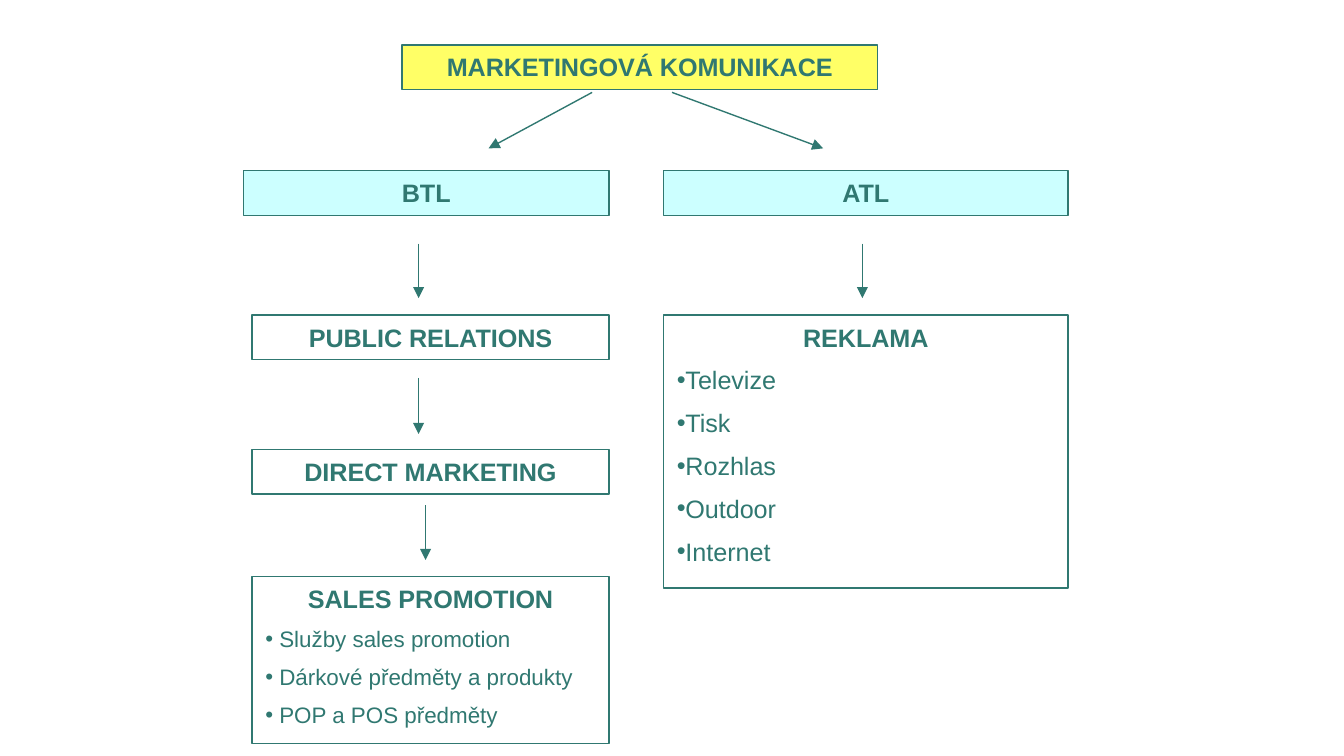
from pptx import Presentation
from pptx.dml.color import RGBColor
from pptx.enum.shapes import MSO_CONNECTOR, MSO_SHAPE
from pptx.enum.text import MSO_ANCHOR, PP_ALIGN
from pptx.oxml.ns import qn
from pptx.util import Pt
from lxml import etree

RECTANGLE = MSO_SHAPE.RECTANGLE
STRAIGHT = MSO_CONNECTOR.STRAIGHT
TOP = MSO_ANCHOR.TOP
LEFT, CENTER = PP_ALIGN.LEFT, PP_ALIGN.CENTER
PX = 9525
TEAL, YELLOW, CYAN = "307871", "FFFF66", "CCFFFF"
HEADING_SIZE = 13.5


def color(value):
    return RGBColor.from_string(value)


def write_line(paragraph, text, size, bullet, hanging):
    properties = paragraph._p.get_or_add_pPr()
    properties.set("marL", str(hanging * PX))
    properties.set("indent", str(-hanging * PX))
    if bullet:
        etree.SubElement(properties, qn("a:buFont"), typeface="Arial")
        etree.SubElement(properties, qn("a:buChar"), char="•")
    paragraph.alignment = LEFT if bullet else CENTER
    paragraph.space_before = Pt(size / 2 if bullet else 0)
    run = paragraph.add_run()
    run.text = text
    font_format = {"name": "Arial", "size": Pt(size), "bold": not bullet}
    for attribute, value in font_format.items():
        setattr(run.font, attribute, value)
    run.font.color.rgb = color(TEAL)


prs = Presentation()
prs.slide_width, prs.slide_height = 960 * PX, 540 * PX
slide = prs.slides.add_slide(prs.slide_layouts[5])

sales_items = ["Služby sales promotion", "Dárkové předměty a produkty", "POP a POS předměty"]
media = ["Televize", "Tisk", "Rozhlas", "Outdoor", "Internet"]
boxes = [
    ("MARKETINGOVÁ KOMUNIKACE", 287, 32, 340, 32, YELLOW, [], HEADING_SIZE, 0),
    ("BTL", 174, 122, 261, 32, CYAN, [], HEADING_SIZE, 0),
    ("ATL", 474, 122, 289, 32, CYAN, [], HEADING_SIZE, 0),
    ("PUBLIC RELATIONS", 180, 225, 255, 32, None, [], HEADING_SIZE, 0),
    ("DIRECT MARKETING", 180, 321, 255, 32, None, [], HEADING_SIZE, 0),
    ("SALES PROMOTION", 180, 412, 255, 119, None, sales_items, 12, 10),
    ("REKLAMA", 474, 225, 289, 195, None, media, HEADING_SIZE, 0),
]
for index, (heading, left, top, width, height, fill, items, item_size, hanging) in enumerate(boxes):
    if index == 0:
        box = slide.shapes.title
    else:
        box = slide.shapes.add_shape(RECTANGLE, 0, 0, PX, PX)
        box.shadow.inherit = False
    place = {"left": left, "top": top, "width": width, "height": height}
    for attribute, value in place.items():
        setattr(box, attribute, value * PX)
    if fill:
        box.fill.solid()
        box.fill.fore_color.rgb = color(fill)
    else:
        box.fill.background()
    box.line.color.rgb = color(TEAL)
    box.line.width = Pt(0.75)
    frame = box.text_frame
    frame_format = {"word_wrap": True, "vertical_anchor": TOP, "margin_top": 5 * PX}
    for attribute, value in frame_format.items():
        setattr(frame, attribute, value)
    write_line(frame.paragraphs[0], heading, HEADING_SIZE, False, hanging)
    for item in items:
        write_line(frame.add_paragraph(), item, item_size, True, hanging)

arrows = [
    (299, 174, 299, 213),
    (299, 270, 299, 310),
    (304, 361, 304, 400),
    (616, 174, 616, 213),
    (423, 66, 349, 106),
    (480, 66, 588, 106),
]
for ends in arrows:
    arrow = slide.shapes.add_connector(STRAIGHT, *(end * PX for end in ends))
    arrow.line.color.rgb = color(TEAL)
    arrow.line.width = Pt(0.75)
    etree.SubElement(arrow.line._get_or_add_ln(), qn("a:tailEnd"), type="triangle")
    etree.SubElement(arrow._element.spPr, qn("a:effectLst"))

prs.save("out.pptx")
